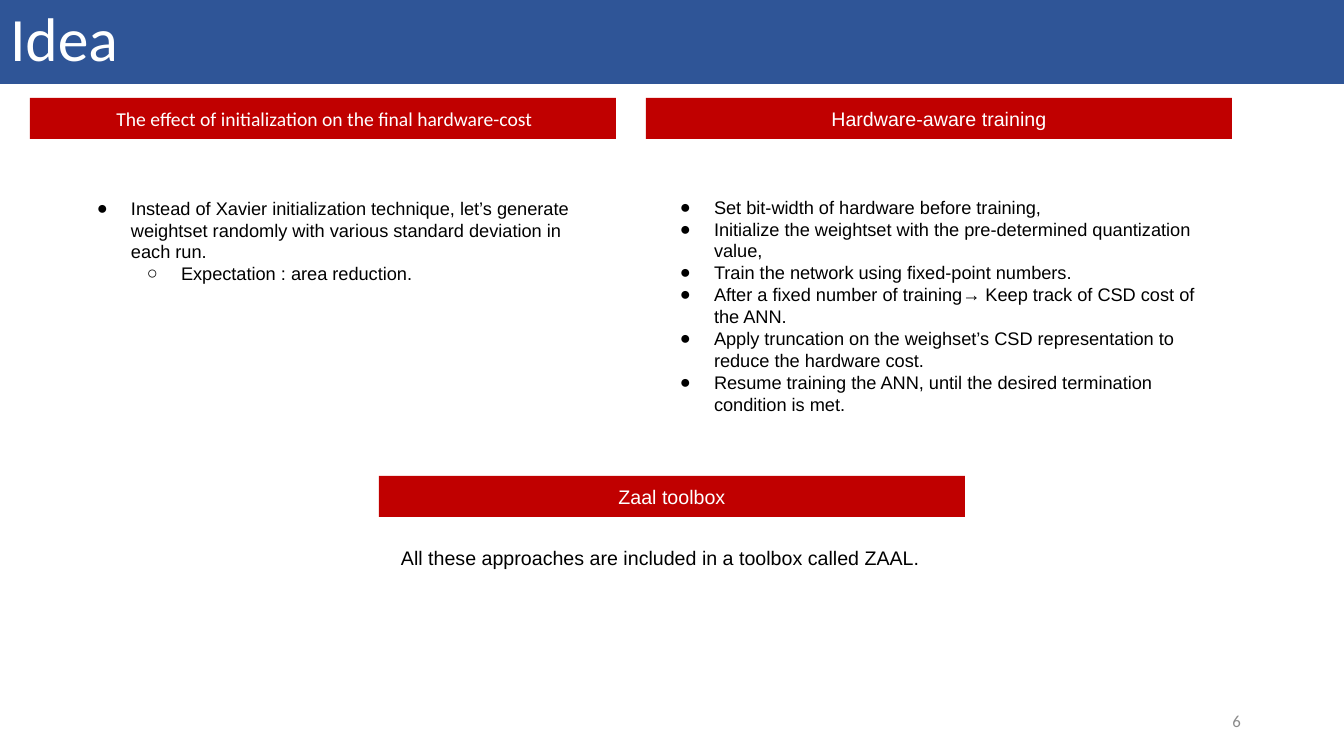
from lxml.etree import SubElement
from pptx import Presentation
from pptx.dml.color import RGBColor
from pptx.enum.shapes import MSO_SHAPE
from pptx.enum.text import MSO_ANCHOR, PP_ALIGN
from pptx.oxml.ns import qn
from pptx.util import Emu, Pt

BLUE, RED, WHITE, BLACK, GRAY = "2F5597", "C00000", "FFFFFF", "000000", "8B8B8B"
SCALE = 914400 / 100.8


def px(length):
    return Emu(round(length * SCALE))


def color(value):
    return RGBColor.from_string(value)


def apply(target, values):
    for name, value in values.items():
        setattr(target, name, value)


class SlideBuilder:
    bullets = ("●", "○")
    indent = 50
    hanging = 34

    def __init__(self, presentation):
        self.slide = presentation.slides.add_slide(presentation.slide_layouts[6])

    def fill_text(self, shape, lines, size, text_color, font="Arial", align=PP_ALIGN.LEFT,
                  anchor=MSO_ANCHOR.TOP, inset=5, spacing=None):
        frame = shape.text_frame
        apply(frame, {"word_wrap": True, "vertical_anchor": anchor,
                      "margin_left": px(10), "margin_right": px(10),
                      "margin_top": px(inset), "margin_bottom": px(inset)})
        for index, line in enumerate(lines):
            paragraph = frame.add_paragraph() if index else frame.paragraphs[0]
            apply(paragraph, {"alignment": align, "line_spacing": spacing})
            run = paragraph.add_run()
            run.text = line
            apply(run.font, {"name": font, "size": Pt(size)})
            run.font.color.rgb = color(text_color)
        return frame

    def bar(self, box, fill):
        shape = self.slide.shapes.add_shape(MSO_SHAPE.RECTANGLE, *map(px, box))
        shape.shadow.inherit = False
        shape.fill.solid()
        shape.fill.fore_color.rgb = color(fill)
        shape.line.fill.background()
        return shape

    def title(self, box, text):
        self.fill_text(self.bar(box, BLUE), [text], 44, WHITE, "Calibri",
                       anchor=MSO_ANCHOR.MIDDLE, spacing=0.9)

    def banner(self, left, top, text=None):
        shape = self.bar((left, top, 586, 41), RED)
        if text:
            self.fill_text(shape, [text], 14, WHITE, align=PP_ALIGN.CENTER,
                           anchor=MSO_ANCHOR.MIDDLE, inset=10)

    def text(self, box, lines, size, text_color, **style):
        shape = self.slide.shapes.add_textbox(*map(px, box))
        return self.fill_text(shape, lines, size, text_color, **style)

    def bullet_list(self, box, items):
        frame = self.text(box, [line for level, line in items], 13, BLACK)
        for paragraph, (level, line) in zip(frame.paragraphs, items):
            paragraph.level = level
            properties = paragraph._p.get_or_add_pPr()
            properties.set("marL", str(px(self.indent * (level + 1))))
            properties.set("indent", str(-px(self.hanging)))
            bullet_color = SubElement(properties, qn("a:buClr"))
            SubElement(bullet_color, qn("a:srgbClr"), val=BLACK)
            SubElement(properties, qn("a:buFont"), typeface="Arial")
            SubElement(properties, qn("a:buChar"), char=self.bullets[level])


def main():
    presentation = Presentation()
    apply(presentation, {"slide_width": px(1344), "slide_height": px(756)})
    builder = SlideBuilder(presentation)

    builder.title((0, 0, 1344, 84), "Idea")
    builder.bullet_list((654, 191, 570, 256), [
        (0, "Set bit-width of hardware before training,"),
        (0, "Initialize the weightset with the pre-determined quantization value,"),
        (0, "Train the network using fixed-point numbers."),
        (0, "After a fixed number of training→ Keep track of CSD cost of the ANN."),
        (0, "Apply truncation on the weighset’s CSD representation to reduce the hardware cost."),
        (0, "Resume training the ANN, until the desired termination condition is met."),
    ])
    builder.bullet_list((71, 192, 533, 100), [
        (0, "Instead of Xavier initialization technique, let’s generate weightset "
            "randomly with various standard deviation in each run."),
        (1, "Expectation : area reduction."),
    ])
    builder.banner(30, 98)
    builder.text((58, 102, 533, 27),
                 ["The effect of initialization on the final hardware-cost"],
                 14, WHITE, font="Calibri", align=PP_ALIGN.CENTER)
    builder.text((949, 701, 302, 40), ["6"], 12, GRAY, font="Calibri",
                 align=PP_ALIGN.RIGHT, anchor=MSO_ANCHOR.MIDDLE)
    builder.banner(646, 98, "Hardware-aware training")
    builder.banner(379, 476, "Zaal toolbox")
    builder.text((391, 536, 586, 44),
                 ["All these approaches are included in a toolbox called ZAAL."],
                 14, BLACK, inset=10)
    presentation.save("out.pptx")


if __name__ == "__main__":
    main()
